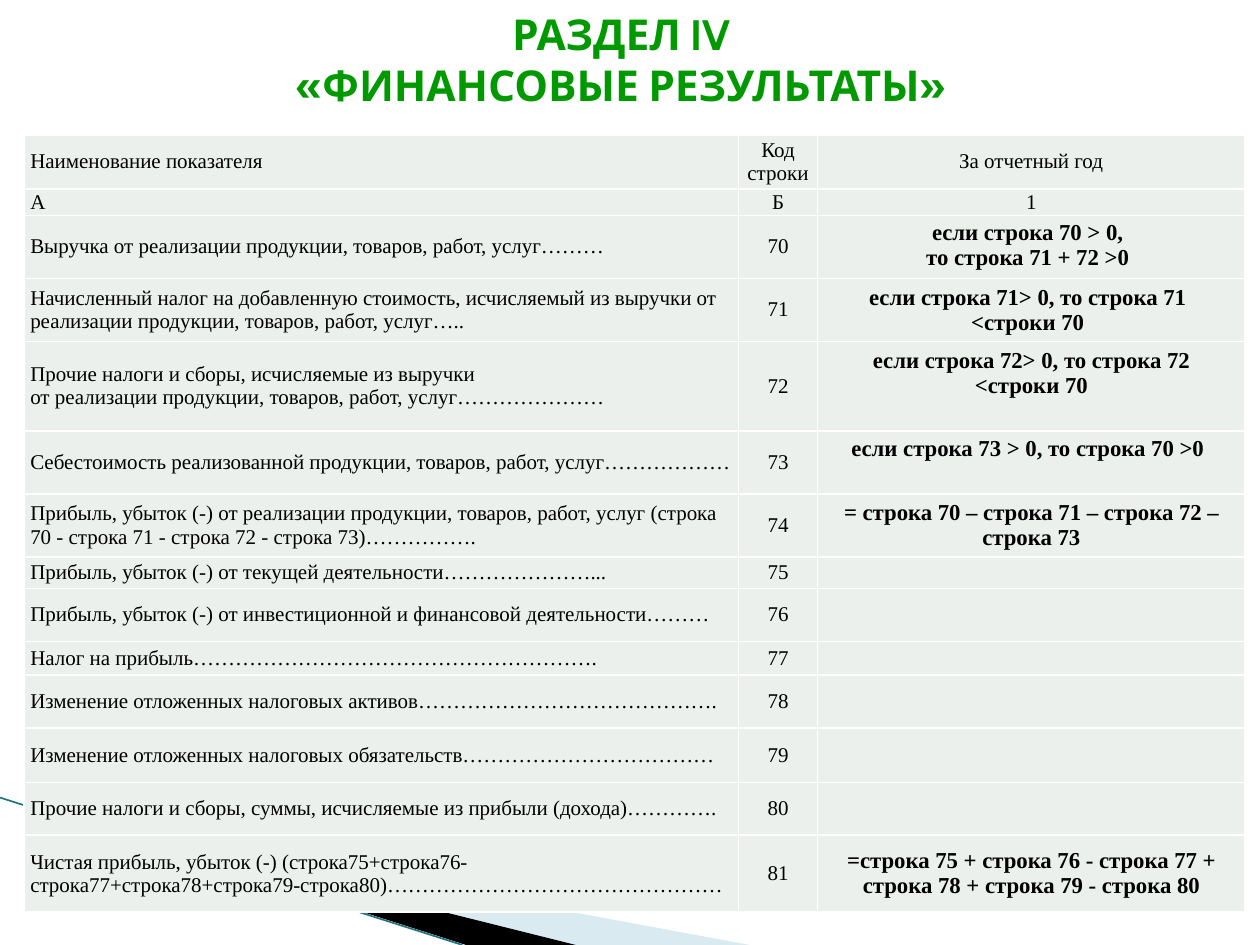
from dataclasses import dataclass

from lxml.etree import SubElement
from pptx import Presentation
from pptx.dml.color import RGBColor
from pptx.enum.shapes import MSO_CONNECTOR
from pptx.enum.text import MSO_ANCHOR, MSO_AUTO_SIZE, PP_ALIGN
from pptx.oxml.ns import qn
from pptx.util import Inches, Pt


@dataclass(frozen=True)
class Theme:
    title_font: str = "Cabin"
    table_font: str = "Times New Roman"
    title_size: float = 24.3
    table_size: float = 12
    rule_size: float = 13
    title_color: str = "009900"
    text_color: str = "000000"
    cell_fill: str = "EBF0EC"
    border_color: str = "FFFFFF"
    pale_wedge: str = "A0CBDC"
    dark_wedge: str = "000000"
    edge_line: str = "1F7383"


THEME = Theme()
COLUMN_WIDTHS = (5.67, 0.63, 3.39)
HEADER_ROWS = 2
SIDE_MARGIN = 0.05
# Right and bottom margins that nudge some control rules, by line code
RULE_MARGINS = {"70": (0.11, 0.02), "71": (0.11, 0), "72": (SIDE_MARGIN, 0.21),
                "73": (0.11, 0.21)}

# Row height, indicator, line code, control rule
ROWS = (
    (0.43, "Наименование показателя", "Код строки", "За отчетный год"),
    (0.21, "А", "Б", "1"),
    (0.5, "Выручка от реализации продукции, товаров, работ, услуг………", "70",
     "если строка 70 > 0,\nто строка 71 + 72 >0"),
    (0.5, "Начисленный налог на добавленную стоимость, исчисляемый из выручки от "
     "реализации продукции, товаров, работ, услуг…..", "71",
     "если строка 71> 0, то строка 71\v<строки 70"),
    (0.71, "Прочие налоги и сборы, исчисляемые из выручки\v"
     "от реализации продукции, товаров, работ, услуг…………………", "72",
     "если строка 72> 0, то строка 72\v<строки 70"),
    (0.5, "Себестоимость реализованной продукции, товаров, работ, услуг………………", "73",
     "если строка 73 > 0, то строка 70 >0"),
    (0.5, "Прибыль, убыток (-) от реализации продукции, товаров, работ, услуг (строка "
     "70 - строка 71 - строка 72 - строка 73)…………….", "74",
     "= строка 70 – строка 71 – строка 72 – строка 73"),
    (0.25, "Прибыль, убыток (-) от текущей деятельности…………………...", "75", ""),
    (0.42, "Прибыль, убыток (-) от инвестиционной и финансовой деятельности………", "76", ""),
    (0.27, "Налог на прибыль………………………………………………….", "77", ""),
    (0.42, "Изменение отложенных налоговых активов…………………………………….", "78", ""),
    (0.43, "Изменение отложенных налоговых обязательств………………………………", "79", ""),
    (0.42, "Прочие налоги и сборы, суммы, исчисляемые из прибыли (дохода)………….", "80", ""),
    (0.61, "Чистая прибыль, убыток (-) (строка75+строка76-"
     "строка77+строка78+строка79-строка80)…………………………………………", "81",
     "=строка 75 + строка 76 - строка 77 + строка 78 + строка 79 - строка 80"),
)


def color(value):
    return RGBColor.from_string(value)


def format_paragraph(paragraph, font_name, size, text_color, bold, alignment):
    paragraph.alignment = alignment
    font = paragraph.font
    font.name, font.size, font.bold = font_name, Pt(size), bold
    font.color.rgb = color(text_color)


def add_wedge(slide, points, fill, opacity=100):
    corners = [(Inches(x), Inches(y)) for x, y in points]
    builder = slide.shapes.build_freeform(*corners[0])
    builder.add_line_segments(corners[1:], close=True)
    shape = builder.convert_to_shape()
    shape.shadow.inherit = False
    shape.fill.solid()
    shape.fill.fore_color.rgb = color(fill)
    shape.line.fill.background()
    if opacity < 100:
        solid_color = shape._element.spPr.find(qn("a:solidFill"))[0]
        SubElement(solid_color, qn("a:alpha"), val=str(opacity * 1000))


def add_edge_line(slide, start, end):
    line = slide.shapes.add_connector(
        MSO_CONNECTOR.STRAIGHT, *(Inches(value) for value in start + end))
    line.line.color.rgb = color(THEME.edge_line)
    line.line.width = Pt(0.95)
    SubElement(line._element.spPr, qn("a:effectLst"))


def set_title(slide, text):
    title = slide.shapes.title
    title.left, title.top = Inches(0.43), Inches(0.05)
    title.width, title.height = Inches(9), Inches(1.25)
    frame = title.text_frame
    frame.text = text
    frame.auto_size = MSO_AUTO_SIZE.NONE
    frame.vertical_anchor = MSO_ANCHOR.TOP
    frame.margin_top = Inches(0.01)
    format_paragraph(frame.paragraphs[0], THEME.title_font, THEME.title_size,
                     THEME.title_color, True, PP_ALIGN.CENTER)


def add_borders(cell):
    properties = cell._tc.get_or_add_tcPr()
    for side in ("lnL", "lnR", "lnT", "lnB"):
        border = SubElement(properties, qn(f"a:{side}"), w=str(Pt(1)))
        fill = SubElement(border, qn("a:solidFill"))
        SubElement(fill, qn("a:srgbClr"), val=THEME.border_color)


def fill_cell(cell, text, size, bold, alignment, margins=(SIDE_MARGIN, 0)):
    cell.text = text
    cell.vertical_anchor = MSO_ANCHOR.MIDDLE
    cell.margin_left, cell.margin_top = Inches(SIDE_MARGIN), 0
    cell.margin_right, cell.margin_bottom = (Inches(margin) for margin in margins)
    for paragraph in cell.text_frame.paragraphs:
        format_paragraph(paragraph, THEME.table_font, size, THEME.text_color, bold, alignment)
        if not text:  # keeps an empty line from stretching its row
            paragraph._p.get_or_add_endParaRPr().set("sz", str(size * 100))
    add_borders(cell)
    cell.fill.solid()
    cell.fill.fore_color.rgb = color(THEME.cell_fill)


def add_results_table(slide):
    heights = [row[0] for row in ROWS]
    table = slide.shapes.add_table(
        len(ROWS), len(COLUMN_WIDTHS), Inches(0.19), Inches(1.07),
        Inches(sum(COLUMN_WIDTHS)), Inches(sum(heights))).table
    table.first_row = table.horz_banding = False
    for column, width in zip(table.columns, COLUMN_WIDTHS):
        column.width = Inches(width)
    for index, (height, name, code, rule) in enumerate(ROWS):
        table.rows[index].height = Inches(height)
        is_rule = index >= HEADER_ROWS and bool(rule)
        rule_size = THEME.rule_size if is_rule else THEME.table_size
        fill_cell(table.cell(index, 0), name, THEME.table_size, False, PP_ALIGN.LEFT)
        fill_cell(table.cell(index, 1), code, THEME.table_size, False, PP_ALIGN.CENTER)
        fill_cell(table.cell(index, 2), rule, rule_size, is_rule, PP_ALIGN.CENTER,
                  RULE_MARGINS.get(code, (SIDE_MARGIN, 0)))


def main():
    presentation = Presentation()
    presentation.slide_width, presentation.slide_height = Inches(10), Inches(7.5)
    slide = presentation.slides.add_slide(presentation.slide_layouts[5])

    # Corner decoration behind the table
    add_wedge(slide, [(0.55, 6.5), (5.95, 7.5), (4.56, 7.5)], THEME.pale_wedge, 40)
    add_wedge(slide, [(0.53, 6.49), (4.57, 7.5), (3.7, 7.5)], THEME.dark_wedge)
    add_edge_line(slide, (0, 6.33), (3.67, 7.5))

    # Heading and table
    set_title(slide, "РАЗДЕЛ IV\v«ФИНАНСОВЫЕ РЕЗУЛЬТАТЫ»")
    add_results_table(slide)
    presentation.save("out.pptx")


if __name__ == "__main__":
    main()
